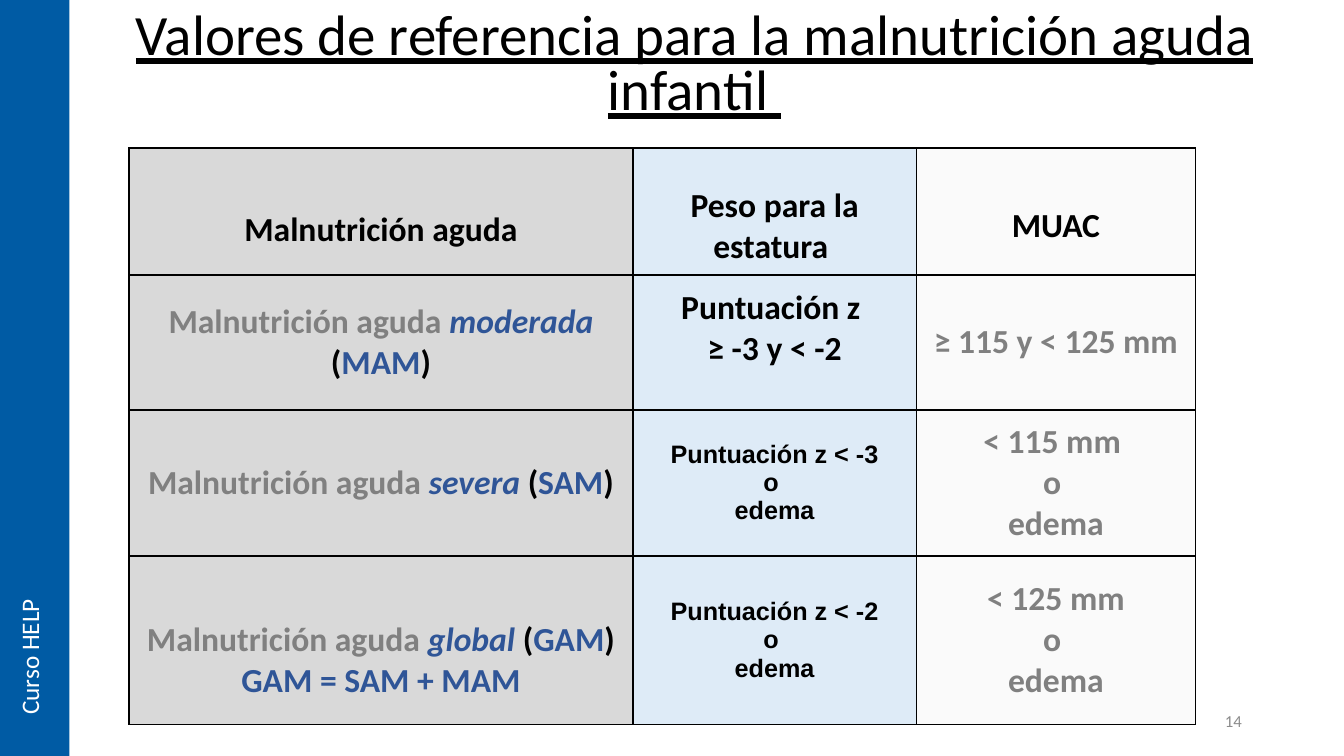
from lxml import etree
from pptx import Presentation
from pptx.dml.color import RGBColor
from pptx.enum.shapes import MSO_SHAPE
from pptx.enum.text import MSO_ANCHOR, MSO_AUTO_SIZE, PP_ALIGN
from pptx.oxml.ns import qn
from pptx.util import Cm, Pt

RECTANGLE = MSO_SHAPE.RECTANGLE
MIDDLE, BOTTOM = MSO_ANCHOR.MIDDLE, MSO_ANCHOR.BOTTOM
LEFT, CENTER, RIGHT = PP_ALIGN.LEFT, PP_ALIGN.CENTER, PP_ALIGN.RIGHT
FIT_SHAPE = MSO_AUTO_SIZE.SHAPE_TO_FIT_TEXT

COLORS = {
    "black": "000000",
    "white": "FFFFFF",
    "gray": "808080",
    "number": "8C8C8C",
    "accent": "2F5597",
    "band": "005BA4",
}
COLUMN_FILLS = ["D9D9D9", "DEEBF7", "FAFAFA"]


def add_span(para, text, size=24, color="black", font="Calibri", align=CENTER,
             bold=False, italic=False, underline=False):
    para.alignment = align
    span = para.add_run()
    span.text = text
    span.font.name = font
    span.font.size = Pt(size)
    span.font.bold = bold
    span.font.italic = italic
    span.font.underline = underline
    span.font.color.rgb = RGBColor.from_string(COLORS[color])


def add_border(cell):
    properties = cell._tc.get_or_add_tcPr()
    for position, side in enumerate(["a:lnL", "a:lnR", "a:lnT", "a:lnB"]):
        line = etree.Element(qn(side), w=str(Pt(1)))
        fill = etree.SubElement(line, qn("a:solidFill"))
        etree.SubElement(fill, qn("a:srgbClr"), val=COLORS["black"])
        properties.insert(position, line)


deck = Presentation()
deck.slide_width, deck.slide_height = Cm(33.87), Cm(19.05)
page = deck.slides.add_slide(deck.slide_layouts[6])

title = page.shapes.add_textbox(Cm(1.75), Cm(0), Cm(31.5), Cm(3.18)).text_frame
title.word_wrap = True
title.vertical_anchor = BOTTOM
title.paragraphs[0].line_spacing = 0.8
add_span(title.paragraphs[0], "Valores de referencia para la malnutrición aguda infantil ",
         size=40.7, underline=True)


black, gray, arial = {}, {"color": "gray"}, {"font": "Arial", "size": 18}
blue, blue_italic = {"color": "accent"}, {"color": "accent", "italic": True}


names = [
    [("Malnutrición aguda ", gray), (kind, blue_italic), ("(", black), (code, blue), (")", black)]
    for kind, code in [("moderada ", "MAM"), ("severa ", "SAM"), ("global ", "GAM")]
]
scores = [
    [[(text, arial)] for text in [limit, "o ", "edema"]]
    for limit in ["Puntuación z < -3", "Puntuación z < -2"]
]
arm_limits = [
    [[(text, gray)] for text in [limit, "o ", "edema"]]
    for limit in ["< 115 mm ", "< 125 mm"]
]
rows = [
    [[[("Malnutrición aguda", black)]],
     [[("Peso para la estatura ", black)]],
     [[("MUAC", black)]]],
    [[names[0]],
     [[("Puntuación z ", black)], [("≥ -3 y < -2", black)]],
     [[("≥ 115 y < 125 mm", gray)]]],
    [[names[1]], scores[0], arm_limits[0]],
    [[names[2], [("GAM = SAM + MAM", blue)]], scores[1], arm_limits[1]],
]
extra_top = {(0, 0): 0.93, (0, 1): 0.75, (0, 2): 0.75, (3, 0): 1.02}
extra_bottom = {(1, 1): 0.71}
column_widths = [12.7, 7.14, 7.04]
row_heights = [3.2, 3.4, 3.68, 4.24]

table = page.shapes.add_table(4, 3, Cm(3.25), Cm(3.73), Cm(sum(column_widths)),
                              Cm(sum(row_heights))).table
table.first_row = table.horz_banding = False
for column, width in zip(table.columns, column_widths):
    column.width = Cm(width)
for r, (height, cells) in enumerate(zip(row_heights, rows)):
    table.rows[r].height = Cm(height)
    for c, lines in enumerate(cells):
        cell = table.cell(r, c)
        cell.vertical_anchor = MIDDLE
        cell.margin_left = cell.margin_right = Cm(0.15)
        cell.margin_top = Cm(0.1 + extra_top.get((r, c), 0))
        cell.margin_bottom = Cm(0.1 + extra_bottom.get((r, c), 0))
        cell.fill.solid()
        cell.fill.fore_color.rgb = RGBColor.from_string(COLUMN_FILLS[c])
        add_border(cell)
        for number, line in enumerate(lines):
            frame = cell.text_frame
            para = frame.add_paragraph() if number else frame.paragraphs[0]
            for text, style in line:
                add_span(para, text, bold=True, **style)

band = page.shapes.add_shape(RECTANGLE, Cm(0), Cm(0), Cm(1.75), deck.slide_height)
band.shadow.inherit = False
band.fill.solid()
band.fill.fore_color.rgb = RGBColor.from_string(COLORS["band"])
band.line.fill.background()

course = page.shapes.add_textbox(Cm(0.23), Cm(14.25), Cm(1.27), Cm(4.01)).text_frame
course.word_wrap = False
course.auto_size = FIT_SHAPE
course._txBody.bodyPr.set("vert", "vert270")
add_span(course.paragraphs[0], "Curso HELP", size=18, color="white", align=LEFT)

page_number = page.shapes.add_textbox(Cm(23.93), Cm(17.65), Cm(7.62), Cm(1.02)).text_frame
page_number.word_wrap = True
page_number.vertical_anchor = MIDDLE
add_span(page_number.paragraphs[0], "14", size=12, color="number", align=RIGHT)

deck.save("out.pptx")
